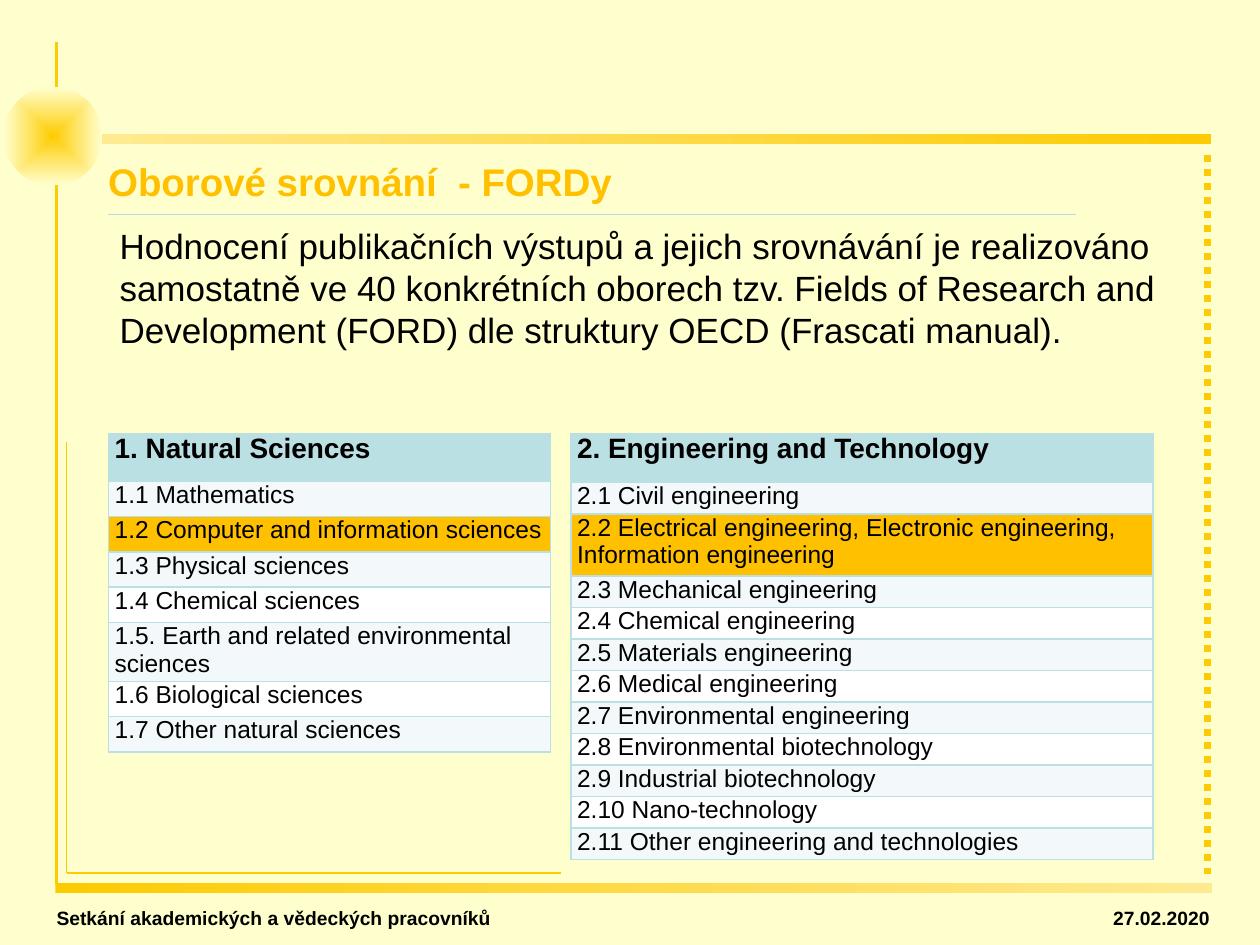
from lxml import etree
from pptx import Presentation
from pptx.dml.color import RGBColor
from pptx.enum.dml import MSO_LINE
from pptx.enum.shapes import MSO_CONNECTOR, MSO_SHAPE
from pptx.enum.text import MSO_ANCHOR, PP_ALIGN
from pptx.oxml import parse_xml
from pptx.oxml.ns import nsdecls, qn
from pptx.util import Inches, Pt

RECTANGLE = MSO_SHAPE.RECTANGLE
JUNCTION = MSO_SHAPE.FLOWCHART_SUMMING_JUNCTION
STRAIGHT = MSO_CONNECTOR.STRAIGHT
DOTTED = MSO_LINE.ROUND_DOT
TOP, MIDDLE = MSO_ANCHOR.TOP, MSO_ANCHOR.MIDDLE
LEFT, RIGHT = PP_ALIGN.LEFT, PP_ALIGN.RIGHT

FONT = "Arial"
CREAM, GOLD, PALE_GOLD = "FFFFCD", "FDCB01", "FFEA91"
ACCENT, BLACK = "FFC000", "000000"
TEAL, PALE_TEAL, WHITE = "BBE0E3", "F3F9FA", "FFFFFF"

NATURAL_SCIENCES = [
    "1. Natural Sciences",
    "1.1 Mathematics",
    "1.2 Computer and information sciences",
    "1.3 Physical sciences",
    "1.4 Chemical sciences",
    "1.5. Earth and related environmental sciences",
    "1.6 Biological sciences",
    "1.7 Other natural sciences",
]
ENGINEERING = [
    "2. Engineering and Technology",
    "2.1 Civil engineering",
    "2.2 Electrical engineering, Electronic engineering, Information engineering",
    "2.3 Mechanical engineering",
    "2.4 Chemical engineering",
    "2.5 Materials engineering",
    "2.6 Medical engineering",
    "2.7 Environmental engineering",
    "2.8 Environmental biotechnology",
    "2.9 Industrial biotechnology",
    "2.10 Nano-technology",
    "2.11 Other engineering and technologies",
]
HIGHLIGHTED_ROW = 2


def color(hex_value):
    return RGBColor.from_string(hex_value)


def style_font(paragraph, size, hex_value=BLACK, bold=False):
    font = paragraph.font
    font.name, font.size, font.bold = FONT, Pt(size), bold
    font.color.rgb = color(hex_value)


def add_gradient_shape(slide, kind, box, start, end, radial=False):
    shape = slide.shapes.add_shape(kind, *map(Inches, box))
    shape.shadow.inherit = False
    shape.line.fill.background()
    shape.fill.gradient()
    shape.fill.gradient_angle = 0
    for stop, position, hex_value in zip(shape.fill.gradient_stops, (0, 1), (start, end)):
        stop.position = position
        stop.color.rgb = color(hex_value)
    if radial:
        linear = shape.element.spPr.find(f".//{qn('a:lin')}")
        linear.getparent().replace(linear, parse_xml(
            f'<a:path {nsdecls("a")} path="shape">'
            '<a:fillToRect l="50000" t="50000" r="50000" b="50000"/></a:path>'))


def add_line(slide, start, end, hex_value, width, dash=None):
    line = slide.shapes.add_connector(STRAIGHT, *map(Inches, start + end))
    line.line.color.rgb = color(hex_value)
    line.line.width = Pt(width)
    if dash is not None:
        line.line.dash_style = dash
    etree.SubElement(line.element.spPr, qn("a:effectLst"))


def add_text(slide, box, text, size, hex_value=BLACK, bold=False, align=LEFT, anchor=TOP):
    frame = slide.shapes.add_textbox(*map(Inches, box)).text_frame
    frame.word_wrap = True
    frame.vertical_anchor = anchor
    paragraph = frame.paragraphs[0]
    paragraph.text = text
    paragraph.alignment = align
    style_font(paragraph, size, hex_value, bold)
    return paragraph


def add_borders(cell, hex_value, width):
    properties = cell._tc.get_or_add_tcPr()
    for index, side in enumerate(("lnL", "lnR", "lnT", "lnB")):
        properties.insert(index, parse_xml(
            f'<a:{side} {nsdecls("a")} w="{Pt(width)}"><a:solidFill>'
            f'<a:srgbClr val="{hex_value}"/></a:solidFill></a:{side}>'))


def row_fill(index):
    if index == 0:
        return TEAL
    if index == HIGHLIGHTED_ROW:
        return ACCENT
    return PALE_TEAL if index % 2 else WHITE


def add_field_table(slide, left, top, width, fields, heights):
    table = slide.shapes.add_table(
        len(fields), 1, Inches(left), Inches(top), Inches(width), Inches(sum(heights))).table
    table.columns[0].width = Inches(width)
    for index, (field, height) in enumerate(zip(fields, heights)):
        table.rows[index].height = Inches(height)
        cell = table.cell(index, 0)
        cell.margin_left = cell.margin_right = Inches(0.05)
        cell.margin_top = cell.margin_bottom = 0
        cell.fill.solid()
        cell.fill.fore_color.rgb = color(row_fill(index))
        add_borders(cell, TEAL, 1)
        cell.text = field
        is_header = index == 0
        style_font(cell.text_frame.paragraphs[0], 16 if is_header else 14, bold=is_header)


def add_frame(slide):
    # Gradient bars
    add_gradient_shape(slide, RECTANGLE, (0.44, 7.01, 9.18, 0.08), GOLD, PALE_GOLD)
    add_gradient_shape(slide, RECTANGLE, (0.81, 1.06, 8.8, 0.08), PALE_GOLD, GOLD)
    # Side lines and glowing ornament
    add_line(slide, (0.45, 0.33), (0.45, 7.02), GOLD, 1.5)
    add_line(slide, (9.58, 1.23), (9.58, 6.94), GOLD, 4, DOTTED)
    add_gradient_shape(slide, JUNCTION, (0.03, 0.69, 0.78, 0.78), GOLD, CREAM, radial=True)
    # Inner corner
    add_line(slide, (0.53, 3.51), (0.53, 6.93), GOLD, 0.75)
    add_line(slide, (0.53, 6.93), (4.45, 6.93), GOLD, 1)


def main():
    presentation = Presentation()
    presentation.slide_width, presentation.slide_height = Inches(10), Inches(7.5)
    slide = presentation.slides.add_slide(presentation.slide_layouts[6])
    slide.background.fill.solid()
    slide.background.fill.fore_color.rgb = color(CREAM)
    add_frame(slide)

    # Footer
    add_text(slide, (0.35, 7.14, 4.49, 0.24),
             "Setkání akademických a vědeckých pracovníků", 11, bold=True)
    add_text(slide, (8.44, 7.14, 1.26, 0.24), "27.02.2020", 11, bold=True, align=RIGHT)

    # Title and introduction
    add_line(slide, (0.86, 1.7), (8.54, 1.7), "B6DCDF", 0.75)
    title = add_text(slide, (0.76, 1.15, 8.58, 0.58), "Oborové srovnání  - FORDy",
                     22, ACCENT, bold=True, anchor=MIDDLE)
    title.space_after = Pt(8)
    add_text(slide, (0.85, 1.73, 8.48, 1.11),
             "Hodnocení publikačních výstupů a jejich srovnávání je realizováno "
             "samostatně ve 40 konkrétních oborech tzv. Fields of Research and "
             "Development (FORD) dle struktury OECD (Frascati manual).", 20)

    # Field tables
    add_field_table(slide, 0.86, 3.44, 3.51, NATURAL_SCIENCES, [0.38] + [0.28] * 7)
    add_field_table(slide, 4.53, 3.44, 4.62, ENGINEERING, [0.39, 0.25, 0.49] + [0.25] * 9)

    presentation.save("out.pptx")


if __name__ == "__main__":
    main()
